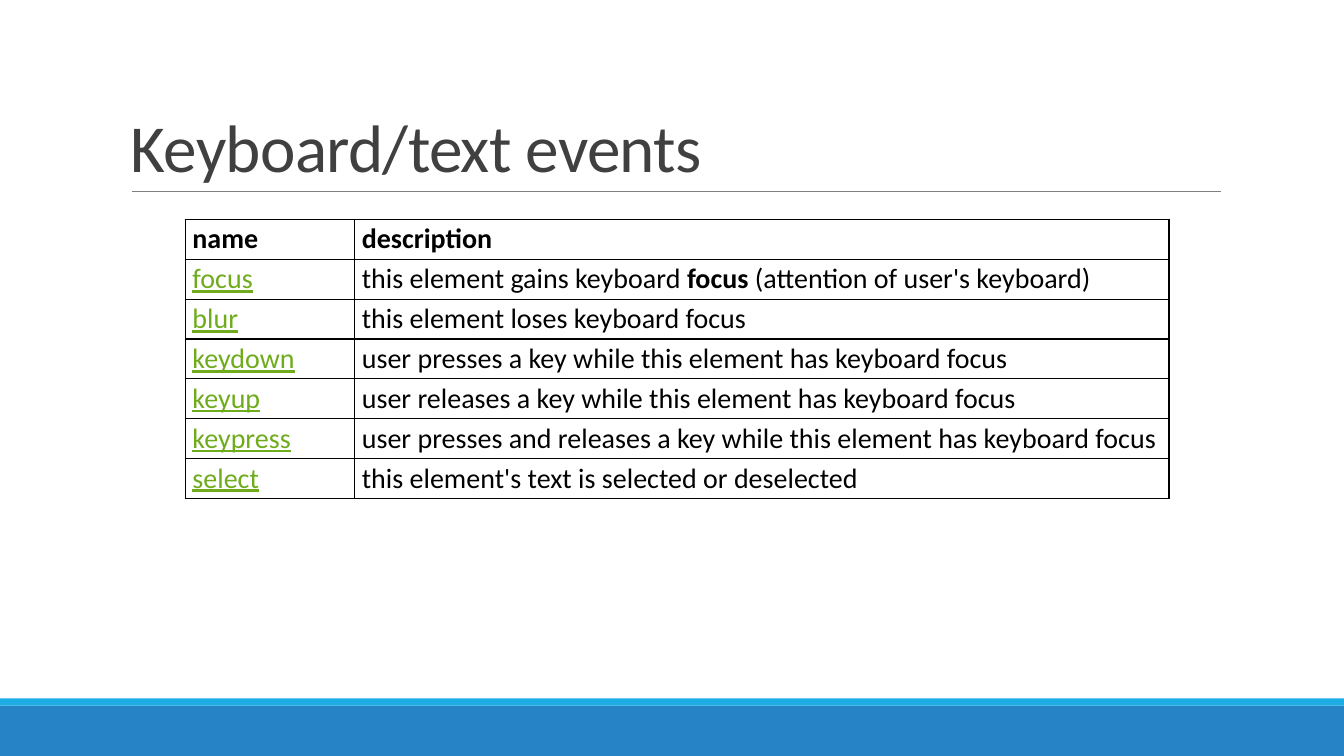
import dataclasses

import lxml.etree
import pptx
import pptx.dml.color
import pptx.enum.shapes
import pptx.enum.text
import pptx.oxml.ns
import pptx.util

Cm = pptx.util.Cm
Pt = pptx.util.Pt
qn = pptx.oxml.ns.qn


@dataclasses.dataclass(frozen=True)
class Theme:
    font: str = "Calibri"
    title_size: int = 48
    table_size: int = 20
    title: str = "404040"
    text: str = "000000"
    link: str = "6EAC1C"
    rule: str = "808080"
    border: str = "000000"
    band: str = "2683C6"
    stripe: str = "1CADE4"


THEME = Theme()
PAGE_WIDTH, PAGE_HEIGHT = 33.87, 19.05

# Each description is a list of (text, bold) spans
EVENTS = [
    ("focus", [("this element gains keyboard ", False), ("focus", True),
               (" (attention of user's keyboard)", False)]),
    ("blur", [("this element loses keyboard focus", False)]),
    ("keydown", [("user presses a key while this element has keyboard focus", False)]),
    ("keyup", [("user releases a key while this element has keyboard focus", False)]),
    ("keypress", [("user presses and releases a key while this element has keyboard focus", False)]),
    ("select", [("this element's text is selected or deselected", False)]),
]


def rgb(value):
    return pptx.dml.color.RGBColor.from_string(value)


def set_font(font, size, color):
    font.name = THEME.font
    font.size = Pt(size)
    font.color.rgb = rgb(color)


def add_bar(page, left, top, width, height, color):
    bar = page.shapes.add_shape(pptx.enum.shapes.MSO_SHAPE.RECTANGLE,
                                Cm(left), Cm(top), Cm(width), Cm(height))
    bar.shadow.inherit = False
    bar.fill.solid()
    bar.fill.fore_color.rgb = rgb(color)
    bar.line.fill.background()


def add_footer(page, left, top, width, height):
    """Wide band with a thin stripe along its top edge."""
    stripe = 0.18
    add_bar(page, left, top + stripe, width, height - stripe, THEME.band)
    add_bar(page, left, top, width, stripe, THEME.stripe)


def add_title(page, text, left, top, width, height):
    """Bottom-anchored title above a thin rule."""
    inset = 0.27
    bottom = Cm(top + height)
    rule = page.shapes.add_connector(pptx.enum.shapes.MSO_CONNECTOR.STRAIGHT,
                                     Cm(left + inset), bottom,
                                     Cm(left + width - inset + 0.05), bottom)
    rule.line.color.rgb = rgb(THEME.rule)
    rule.line.width = Pt(0.5)
    lxml.etree.SubElement(rule.element.spPr, qn("a:effectLst"))

    box = page.shapes.add_textbox(Cm(left), Cm(top), Cm(width), Cm(height))
    frame = box.text_frame
    frame.word_wrap = True
    frame.vertical_anchor = pptx.enum.text.MSO_ANCHOR.BOTTOM
    para = frame.paragraphs[0]
    para.line_spacing = 0.85
    set_font(para.font, THEME.title_size, THEME.title)
    span = para.add_run()
    span.text = text
    # Slightly tightened letter spacing, in hundredths of a point
    span.font.language_id = None
    span.font._element.set("spc", "-50")


def add_borders(cell):
    properties = cell._tc.get_or_add_tcPr()
    for position, side in enumerate(("a:lnL", "a:lnR", "a:lnT", "a:lnB")):
        line = lxml.etree.Element(qn(side), w=str(Pt(1)))
        fill = lxml.etree.SubElement(line, qn("a:solidFill"))
        lxml.etree.SubElement(fill, qn("a:srgbClr"), val=THEME.border)
        properties.insert(position, line)


def fill_cell(cell, spans, color, underline=False):
    cell.margin_left = cell.margin_right = Cm(0.18)
    cell.margin_top = cell.margin_bottom = Cm(0.07)
    cell.fill.background()
    add_borders(cell)
    para = cell.text_frame.paragraphs[0]
    set_font(para.font, THEME.table_size, color)
    para.font.underline = underline
    for text, bold in spans:
        span = para.add_run()
        span.text = text
        span.font.bold = bold


def add_event_table(page, left, top, width, height):
    """Header row, then one row per event with a link-styled name."""
    name_width = 4.27
    count = len(EVENTS) + 1
    table = page.shapes.add_table(count, 2, Cm(left), Cm(top),
                                  Cm(width), Cm(height)).table
    table.horz_banding = False
    table.first_row = False
    table.columns[0].width = Cm(name_width)
    table.columns[1].width = Cm(width - name_width)
    for row in table.rows:
        row.height = Cm(height / count)

    for column, heading in enumerate(("name", "description")):
        fill_cell(table.cell(0, column), [(heading, True)], THEME.text)
    for row, (name, description) in enumerate(EVENTS, start=1):
        fill_cell(table.cell(row, 0), [(name, False)], THEME.link, underline=True)
        fill_cell(table.cell(row, 1), description, THEME.text)


def main():
    deck = pptx.Presentation()
    deck.slide_width = Cm(PAGE_WIDTH)
    deck.slide_height = Cm(PAGE_HEIGHT)
    page = deck.slides.add_slide(deck.slide_layouts[6])

    footer_height = 1.45
    add_footer(page, 0, PAGE_HEIGHT - footer_height, PAGE_WIDTH, footer_height)
    add_title(page, "Keyboard/text events", 3.05, 0.79, 27.94, 4.03)
    add_event_table(page, 4.67, 5.53, 24.79, 7.03)
    deck.save("out.pptx")


if __name__ == "__main__":
    main()
